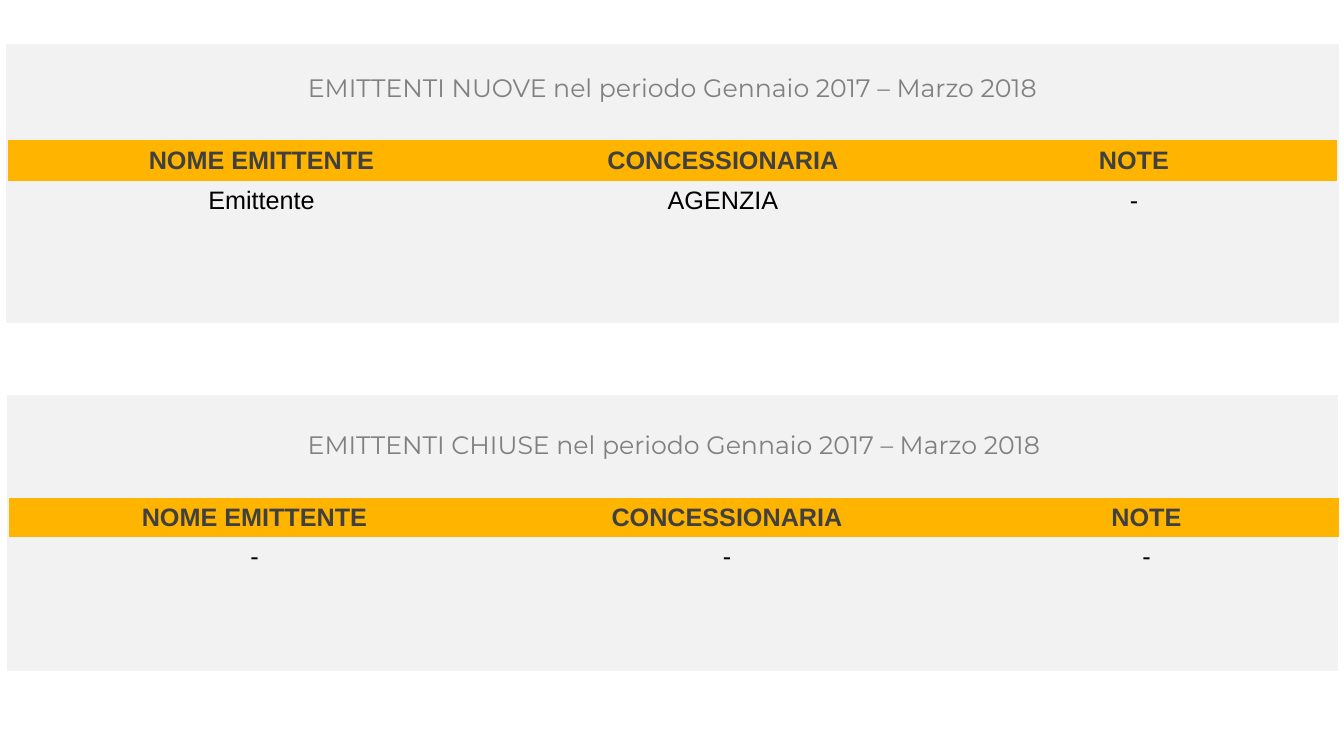
from pptx import Presentation
from pptx.dml.color import RGBColor as Rgb
from pptx.enum.shapes import MSO_SHAPE as Shape
from pptx.enum.text import MSO_ANCHOR as Anchor, PP_ALIGN as Align
from pptx.oxml.ns import qn
from pptx.util import Pt

HEX = {"panel": "F2F2F2", "white": "FFFFFF", "gold": "FFB400",
       "title": "808080", "head": "404040", "body": "000000"}
HEADS = ["NOME EMITTENTE", "CONCESSIONARIA", "NOTE"]
BLOCKS = [
    {"title": "EMITTENTI NUOVE nel periodo Gennaio 2017 – Marzo 2018",
     "body": ["Emittente", "AGENZIA", "-"],
     "panel": (7, 45, 1332, 278), "edge": "panel",
     "left": 8, "top": 68, "cols": [507, 416, 406], "rows": [72, 41, 39, 39, 39]},
    {"title": "EMITTENTI CHIUSE nel periodo Gennaio 2017 – Marzo 2018",
     "body": ["-", "-", "-"],
     "panel": (7, 394, 1332, 278), "edge": "white",
     "left": 9, "top": 425, "cols": [491, 454, 385], "rows": [73, 39, 39, 41, 41]},
]
PLAIN = "{2D5ABB26-0587-4C30-8999-92F81FD0307C}"
SCALE = 914400 / 100.8


def px(n):
    return round(n * SCALE)


def color(name):
    return Rgb.from_string(HEX[name])


def write(cell, text, tone, face="Arial", bold=False, anchor=Anchor.MIDDLE):
    cell.text = text
    cell.vertical_anchor = anchor
    para = cell.text_frame.paragraphs[0]
    para.alignment = Align.CENTER
    font = para.font
    font.name, font.size, font.bold = face, Pt(18), bold
    font.color.rgb = color(tone)


def add_panel(slide, block):
    panel = slide.shapes.add_shape(Shape.RECTANGLE, *map(px, block["panel"]))
    panel.shadow.inherit = False
    panel.fill.solid()
    panel.fill.fore_color.rgb = color("panel")
    panel.line.color.rgb = color(block["edge"])
    panel.line.width = Pt(0.75)


def add_grid(slide, block):
    cols, rows = block["cols"], block["rows"]
    box = (block["left"], block["top"], sum(cols), sum(rows))
    table = slide.shapes.add_table(len(rows), len(cols), *map(px, box)).table
    table.first_row = table.horz_banding = False
    table._tbl.tblPr.find(qn("a:tableStyleId")).text = PLAIN
    for col, width in zip(table.columns, cols):
        col.width = px(width)
    for row, height in zip(table.rows, rows):
        row.height = px(height)
    for cell in table.iter_cells():
        cell.fill.background()

    title = table.cell(0, 0)
    title.merge(table.cell(0, len(cols) - 1))
    write(title, block["title"], "title", "Montserrat", anchor=Anchor.TOP)
    for i, (head, body) in enumerate(zip(HEADS, block["body"])):
        cell = table.cell(1, i)
        cell.fill.solid()
        cell.fill.fore_color.rgb = color("gold")
        write(cell, head, "head", bold=True)
        write(table.cell(2, i), body, "body")


def main():
    deck = Presentation()
    deck.slide_width, deck.slide_height = px(1344), px(756)
    slide = deck.slides.add_slide(deck.slide_layouts[6])
    for block in BLOCKS:
        add_panel(slide, block)
        add_grid(slide, block)
    deck.save("out.pptx")


if __name__ == "__main__":
    main()
